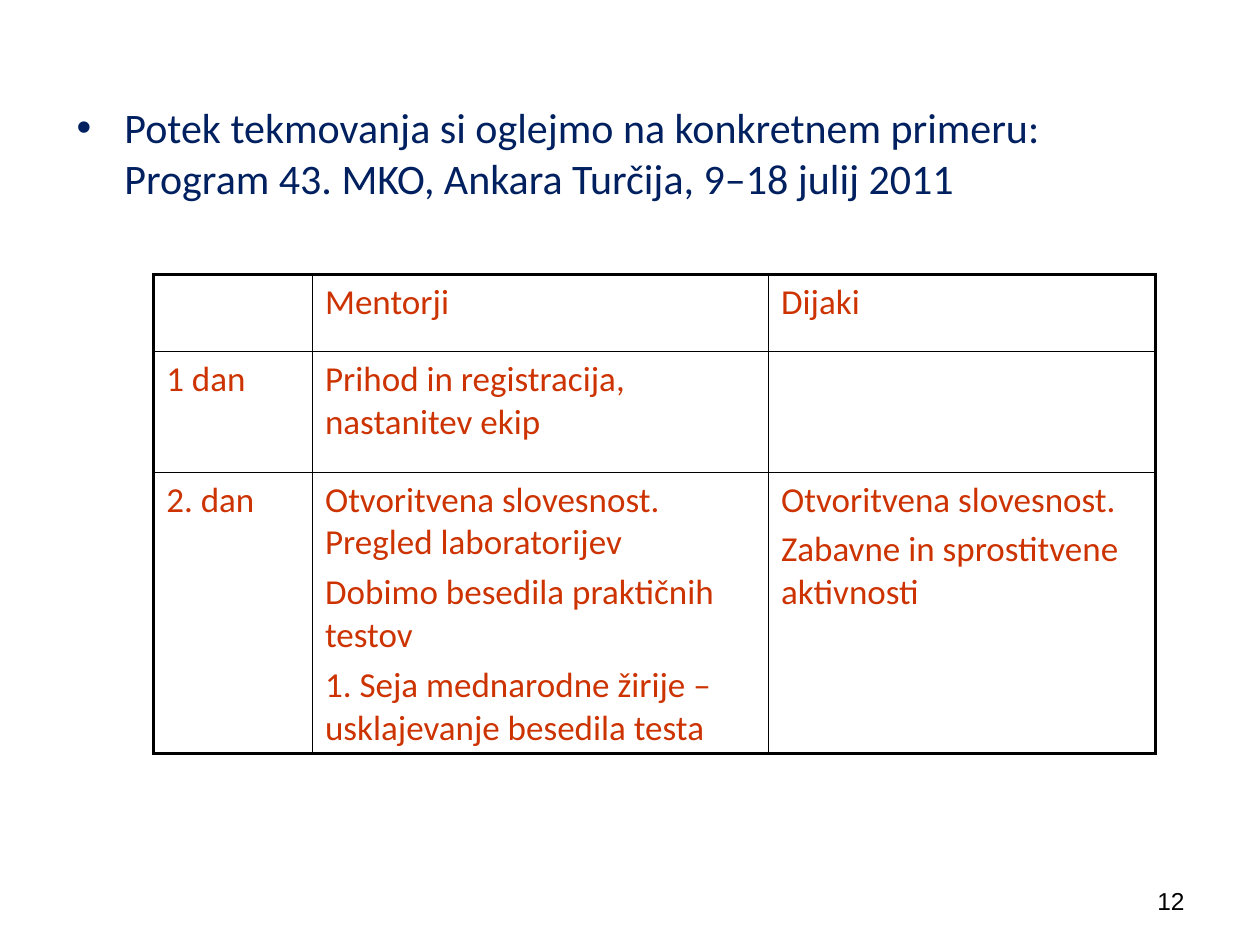
"""Build the slide with the programme of the first two competition days."""
from typing import NamedTuple

from lxml.etree import SubElement as Sub
from pptx import Presentation
from pptx.dml.color import RGBColor
from pptx.enum.text import MSO_ANCHOR as Anchor, PP_ALIGN as Align
from pptx.oxml.ns import qn
from pptx.util import Inches, Pt

COLS = (1.26, 3.62, 3.07)
ROWS = (0.61, 0.96, 2.23)


class Day(NamedTuple):
    name: str
    mentors: tuple[str, ...]
    pupils: tuple[str, ...]


DAYS = (
    Day("", ("Mentorji",), ("Dijaki",)),
    Day("1 dan", ("Prihod in registracija,\nnastanitev ekip",), ()),
    Day(
        "2. dan",
        (
            "Otvoritvena slovesnost.\nPregled laboratorijev",
            "Dobimo besedila praktičnih testov",
            "1. Seja mednarodne žirije –usklajevanje besedila testa",
        ),
        ("Otvoritvena slovesnost.", "Zabavne in sprostitvene aktivnosti"),
    ),
)


def tint(code: str) -> RGBColor:
    return RGBColor.from_string(code)


def write(frame, *lines: str, size=20, color="CC3300", font="Calibri",
          align=Align.LEFT, gap=4, bullet="") -> None:
    frame.word_wrap = True
    for i, line in enumerate(lines):
        para = frame.add_paragraph() if i else frame.paragraphs[0]
        para.text = line
        para.alignment = align
        if i:
            para.space_before = Pt(gap)
        if bullet:
            props = para._p.get_or_add_pPr()
            props.set("marL", str(Inches(0.38)))
            props.set("indent", str(Inches(-0.38)))
            Sub(props, qn("a:buFont"), typeface="Arial")
            Sub(props, qn("a:buChar"), char=bullet)
        for run in para.runs:
            run.font.name = font
            run.font.size = Pt(size)
            run.font.color.rgb = tint(color)


def add_box(slide, left: float, top: float, width: float, height: float):
    box = slide.shapes.add_textbox(*map(Inches, (left, top, width, height)))
    return box.text_frame


def edge(cell, side: str, width: float) -> None:
    line = Sub(cell._tc.get_or_add_tcPr(), qn(f"a:ln{side}"), w=str(Pt(width)))
    fill = Sub(line, qn("a:solidFill"))
    Sub(fill, qn("a:srgbClr"), val="000000")


def add_plan(slide, days: tuple[Day, ...]) -> None:
    spot = map(Inches, (1.22, 2.18, sum(COLS), sum(ROWS)))
    table = slide.shapes.add_table(len(ROWS), len(COLS), *spot).table
    table.first_row = table.horz_banding = False
    for col, width in zip(table.columns, COLS):
        col.width = Inches(width)
    for r, (day, height) in enumerate(zip(days, ROWS)):
        table.rows[r].height = Inches(height)
        for c, lines in enumerate(((day.name,), day.mentors, day.pupils)):
            cell = table.cell(r, c)
            outer = {"L": c == 0, "R": c == len(COLS) - 1,
                     "T": r == 0, "B": r == len(ROWS) - 1}
            for side, thick in outer.items():
                edge(cell, side, 2.25 if thick else 1)
            cell.fill.background()
            write(cell.text_frame, *lines)


def main() -> None:
    deck = Presentation()
    deck.slide_width, deck.slide_height = Inches(10), Inches(7.5)
    slide = deck.slides.add_slide(deck.slide_layouts[6])
    page = add_box(slide, 7.17, 6.95, 2.33, 0.4)
    page.vertical_anchor = Anchor.MIDDLE
    write(page, "12", size=14, color="000000", font="Arial", align=Align.RIGHT)
    write(
        add_box(slide, 0.51, 0.76, 9, 5.91),
        "Potek tekmovanja si oglejmo na konkretnem primeru: "
        "Program 43. MKO, Ankara Turčija, 9–18 julij 2011",
        size=24, color="002060", bullet="•",
    )
    add_plan(slide, DAYS)
    deck.save("out.pptx")


if __name__ == "__main__":
    main()
